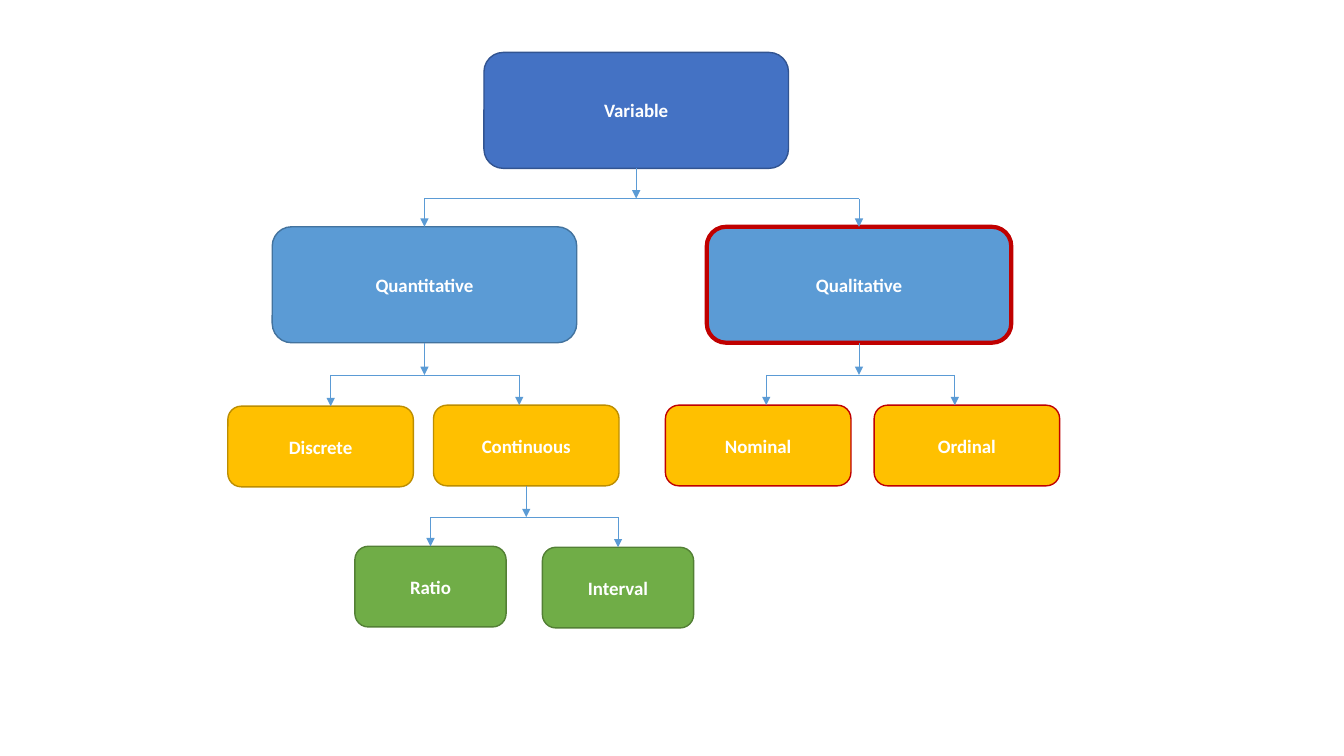
from dataclasses import dataclass

import lxml.etree
import pptx
import pptx.dml.color
import pptx.enum.shapes
import pptx.enum.text
import pptx.oxml.ns
import pptx.util
from pptx.shapes.autoshape import Shape
from pptx.shapes.connector import Connector
from pptx.slide import Slide
from pptx.util import Inches

WHITE = "FFFFFF"
LINK_BLUE = "5B9BD5"
HIGHLIGHT_RED = "C00000"
TOP, BOTTOM = 0, 2  # connection sites of a rectangle
JOIN_TOLERANCE = 0.03


@dataclass(frozen=True)
class Level:
    """Look shared by the boxes of one level of the tree."""
    width: float
    height: float
    fill: str
    outline: str


@dataclass(frozen=True)
class Node:
    label: str
    level: Level
    left: float
    top: float
    outline: str = ""
    outline_width: float = 1

    @property
    def centre(self) -> float:
        return self.left + self.level.width / 2

    @property
    def bottom(self) -> float:
        return self.top + self.level.height


@dataclass(frozen=True)
class Branch:
    """A stem from the parent to a bar, and a drop from the bar to each child."""
    parent: str
    bar: float
    drops: dict[str, float]


ROOT = Level(3.02, 1.15, "4472C4", "325491")
KIND = Level(3.02, 1.15, "5B9BD5", "43739E")
TYPE = Level(1.84, 0.8, "FFC000", "BD8E00")
SCALE = Level(1.5, 0.8, "70AD47", "538035")

NODES = [
    Node("Variable", ROOT, 4.8, 0.52),
    Node("Qualitative", KIND, 7.01, 2.25, HIGHLIGHT_RED, 3),
    Node("Quantitative", KIND, 2.7, 2.25),
    Node("Discrete", TYPE, 2.26, 4.03),
    Node("Continuous", TYPE, 4.3, 4.02),
    Node("Nominal", TYPE, 6.6, 4.02, HIGHLIGHT_RED),
    Node("Ordinal", TYPE, 8.67, 4.02, HIGHLIGHT_RED),
    Node("Interval", SCALE, 5.38, 5.43),
    Node("Ratio", SCALE, 3.52, 5.42),
]

BRANCHES = [
    Branch("Variable", 1.97, {"Quantitative": 4.21, "Qualitative": 8.52}),
    Branch("Quantitative", 3.72, {"Discrete": 3.28, "Continuous": 5.15}),
    Branch("Qualitative", 3.72, {"Nominal": 7.6, "Ordinal": 9.47}),
    Branch("Continuous", 5.13, {"Ratio": 4.25, "Interval": 6.13}),
]


def colour(code: str) -> pptx.dml.color.RGBColor:
    return pptx.dml.color.RGBColor.from_string(code)


def draw_node(page: Slide, node: Node) -> Shape:
    level = node.level
    box = page.shapes.add_shape(
        pptx.enum.shapes.MSO_SHAPE.ROUNDED_RECTANGLE,
        Inches(node.left), Inches(node.top), Inches(level.width), Inches(level.height))
    box.shadow.inherit = False
    box.fill.solid()
    box.fill.fore_color.rgb = colour(level.fill)
    box.line.color.rgb = colour(node.outline or level.outline)
    box.line.width = pptx.util.Pt(node.outline_width)

    box.text_frame.word_wrap = True
    box.text_frame.vertical_anchor = pptx.enum.text.MSO_ANCHOR.MIDDLE
    para = box.text_frame.paragraphs[0]
    para.alignment = pptx.enum.text.PP_ALIGN.CENTER
    span = para.add_run()
    span.text = node.label
    span.font.name = "Calibri"
    span.font.size = pptx.util.Pt(13.5)
    span.font.bold = True
    span.font.color.rgb = colour(WHITE)
    return box


def draw_line(page: Slide, x1: float, y1: float, x2: float, y2: float,
              arrow: bool = False) -> Connector:
    line = page.shapes.add_connector(
        pptx.enum.shapes.MSO_CONNECTOR.STRAIGHT,
        Inches(x1), Inches(y1), Inches(x2), Inches(y2))
    line.line.color.rgb = colour(LINK_BLUE)
    line.line.width = pptx.util.Pt(0.5)
    if arrow:
        lxml.etree.SubElement(line.line._get_or_add_ln(),
                              pptx.oxml.ns.qn("a:tailEnd"), type="triangle")
    lxml.etree.SubElement(line._element.spPr, pptx.oxml.ns.qn("a:effectLst"))
    return line


def draw_branch(page: Slide, branch: Branch, nodes: dict[str, Node],
                boxes: dict[str, Shape]) -> None:
    parent = nodes[branch.parent]
    stem = draw_line(page, parent.centre, parent.bottom, parent.centre, branch.bar, arrow=True)
    stem.begin_connect(boxes[branch.parent], BOTTOM)
    for label, x in branch.drops.items():
        child = nodes[label]
        joined = abs(x - child.centre) < JOIN_TOLERANCE
        x = child.centre if joined else x
        draw_line(page, parent.centre, branch.bar, x, branch.bar)
        drop = draw_line(page, x, branch.bar, x, child.top, arrow=True)
        if joined:
            drop.end_connect(boxes[label], TOP)


def main() -> None:
    deck = pptx.Presentation()
    deck.slide_width, deck.slide_height = Inches(13.33), Inches(7.5)
    page = deck.slides.add_slide(deck.slide_layouts.get_by_name("Blank"))

    # Boxes of the tree
    nodes = {node.label: node for node in NODES}
    boxes = {label: draw_node(page, node) for label, node in nodes.items()}

    # Lines between the levels
    for branch in BRANCHES:
        draw_branch(page, branch, nodes, boxes)

    deck.save("out.pptx")


if __name__ == "__main__":
    main()
